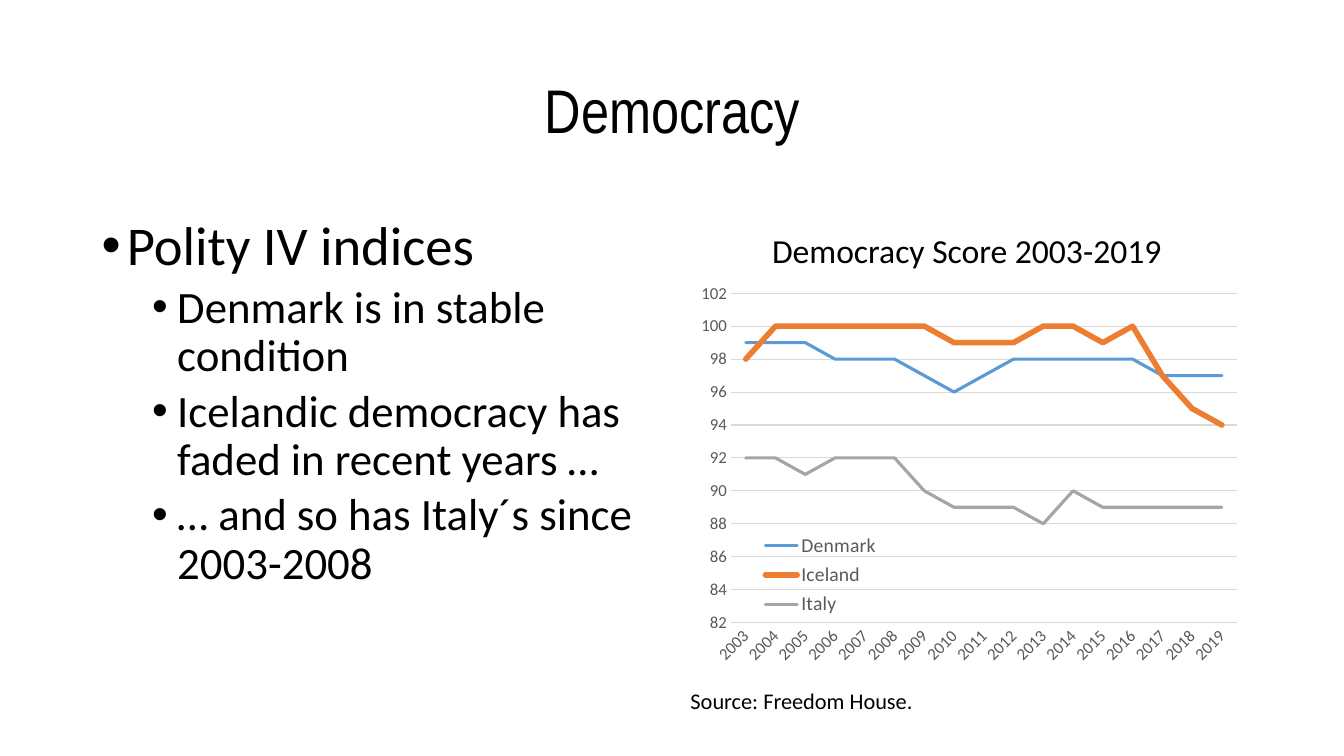
from lxml import etree
from pptx import Presentation
from pptx.chart.data import CategoryChartData
from pptx.dml.color import RGBColor
from pptx.enum.chart import XL_CHART_TYPE, XL_LEGEND_POSITION, XL_MARKER_STYLE, XL_TICK_MARK
from pptx.enum.text import MSO_ANCHOR as ANCHOR, MSO_AUTO_SIZE as AUTO_SIZE, PP_ALIGN as ALIGN
from pptx.oxml.ns import qn
from pptx.util import Inches, Pt

BLACK = RGBColor(0x00, 0x00, 0x00)
LABEL_GREY = RGBColor(0x59, 0x59, 0x59)
GRID_GREY = RGBColor(0xD9, 0xD9, 0xD9)
BLUE = RGBColor(0x5B, 0x9B, 0xD5)
ORANGE = RGBColor(0xED, 0x7D, 0x31)
GREY = RGBColor(0xA5, 0xA5, 0xA5)

YEARS = [str(year) for year in range(2003, 2020)]
SCORES = [
    ("Denmark", BLUE, 2.25, [99, 99, 99, 98, 98, 98, 97, 96, 97, 98, 98, 98, 98, 98, 97, 97, 97]),
    ("Iceland", ORANGE, 4, [98, 100, 100, 100, 100, 100, 100, 99, 99, 99, 100, 100, 99, 100, 97, 95, 94]),
    ("Italy", GREY, 2.25, [92, 92, 91, 92, 92, 92, 90, 89, 89, 89, 88, 90, 89, 89, 89, 89, 89]),
]
BULLETS = [
    ("Polity IV indices", 0),
    ("Denmark is in stable condition", 1),
    ("Icelandic democracy has faded in recent years …", 1),
    ("… and so has Italy´s since 2003-2008", 1),
]


def set_font(font, size, color=BLACK, name="Calibri"):
    font.size = Pt(size)
    font.name = name
    font.color.rgb = color


def write(p, text, size, font="Calibri", align=ALIGN.LEFT, spacing=0.9, before=0, level=0, bullet=False):
    p.alignment = align
    p.line_spacing = spacing
    p.space_before = Pt(before)
    p.level = level
    r = p.add_run()
    r.text = text
    set_font(r.font, size, name=font)
    if bullet:
        pPr = p._p.get_or_add_pPr()
        pPr.set("marL", str(Inches(0.25 + 0.5 * level)))
        pPr.set("indent", str(Inches(-0.25)))
        etree.SubElement(pPr, qn("a:buFont")).set("typeface", "Arial")
        etree.SubElement(pPr, qn("a:buChar")).set("char", "•")


def set_layout(element, index, x, y, w, h, inner=False):
    for old in element.findall(qn("c:layout")):
        element.remove(old)
    layout = etree.Element(qn("c:layout"))
    element.insert(index, layout)
    manual = etree.SubElement(layout, qn("c:manualLayout"))
    values = [("layoutTarget", "inner")] if inner else []
    values += [("xMode", "edge"), ("yMode", "edge"), ("x", x), ("y", y), ("w", w), ("h", h)]
    for tag, value in values:
        etree.SubElement(manual, qn(f"c:{tag}")).set("val", str(value))


class SlideBuilder:
    def __init__(self, prs):
        self.slide = prs.slides.add_slide(prs.slide_layouts[5])

    def frame(self, sp, anchor):
        tf = sp.text_frame
        tf.word_wrap = True
        tf.auto_size = AUTO_SIZE.NONE
        tf.vertical_anchor = anchor
        return tf

    def title(self, text, box):
        sp = self.slide.shapes.title
        sp.left, sp.top, sp.width, sp.height = map(Inches, box)
        tf = self.frame(sp, ANCHOR.MIDDLE)
        write(tf.paragraphs[0], text, 44, font="Arial Narrow", align=ALIGN.CENTER)

    def text(self, text, box, size, anchor=ANCHOR.TOP, **style):
        tf = self.frame(self.slide.shapes.add_textbox(*map(Inches, box)), anchor)
        write(tf.paragraphs[0], text, size, **style)

    def bullets(self, items, box):
        tf = self.frame(self.slide.shapes.add_textbox(*map(Inches, box)), ANCHOR.TOP)
        for i, (text, level) in enumerate(items):
            p = tf.add_paragraph() if i else tf.paragraphs[0]
            write(p, text, 32 if level else 39, before=5 if level else 10, level=level, bullet=True)

    def line_chart(self, categories, series, box):
        data = CategoryChartData()
        data.categories = categories
        for name, _, _, values in series:
            data.add_series(name, values)
        chart = self.slide.shapes.add_chart(XL_CHART_TYPE.LINE, *map(Inches, box), data).chart
        set_font(chart.font, 10)
        chart.has_title = False
        plot = chart.plots[0]
        plot.vary_by_categories = False
        for ser, (_, color, width, _) in zip(plot.series, series):
            ser.smooth = False
            ser.marker.style = XL_MARKER_STYLE.NONE
            ser.format.line.color.rgb = color
            ser.format.line.width = Pt(width)
            ser.format.line._ln.set("cap", "rnd")
        self.axes(chart)
        chart.has_legend = True
        legend = chart.legend
        legend.position = XL_LEGEND_POSITION.BOTTOM
        legend.include_in_layout = False
        set_font(legend.font, 14, LABEL_GREY)
        set_layout(legend._element, 1, 0.12, 0.62, 0.25, 0.23)
        plot_area = chart._chartSpace.chart.plotArea
        set_layout(plot_area, 0, 0.088, 0.042, 0.885, 0.811, inner=True)

    def axes(self, chart):
        cat, val = chart.category_axis, chart.value_axis
        for axis in (cat, val):
            axis.major_tick_mark = axis.minor_tick_mark = XL_TICK_MARK.NONE
            set_font(axis.tick_labels.font, 12, LABEL_GREY)
        cat._element.txPr.bodyPr.set("rot", str(-45 * 60000))
        val.minimum_scale, val.maximum_scale, val.major_unit = 82, 102, 2
        val.has_major_gridlines = True
        val.format.line.fill.background()
        for line in (cat.format.line, val.major_gridlines.format.line):
            line.color.rgb = GRID_GREY
            line.width = Pt(0.75)


def main():
    prs = Presentation()
    prs.slide_width, prs.slide_height = Inches(13.33), Inches(7.5)
    s = SlideBuilder(prs)
    s.title("Democracy", (0.92, 0.4, 11.5, 1.45))
    s.bullets(BULLETS, (0.91, 2.12, 5.64, 4.75))
    s.text("Democracy Score 2003-2019", (6.36, 1.84, 6.46, 0.9), 24,
           anchor=ANCHOR.BOTTOM, align=ALIGN.CENTER, before=10)
    s.text("Source: Freedom House.", (6.75, 6.77, 6.05, 0.37), 16, spacing=1.0)
    s.line_chart(YEARS, SCORES, (6.75, 2.74, 5.67, 4.03))
    prs.save("out.pptx")


if __name__ == "__main__":
    main()
